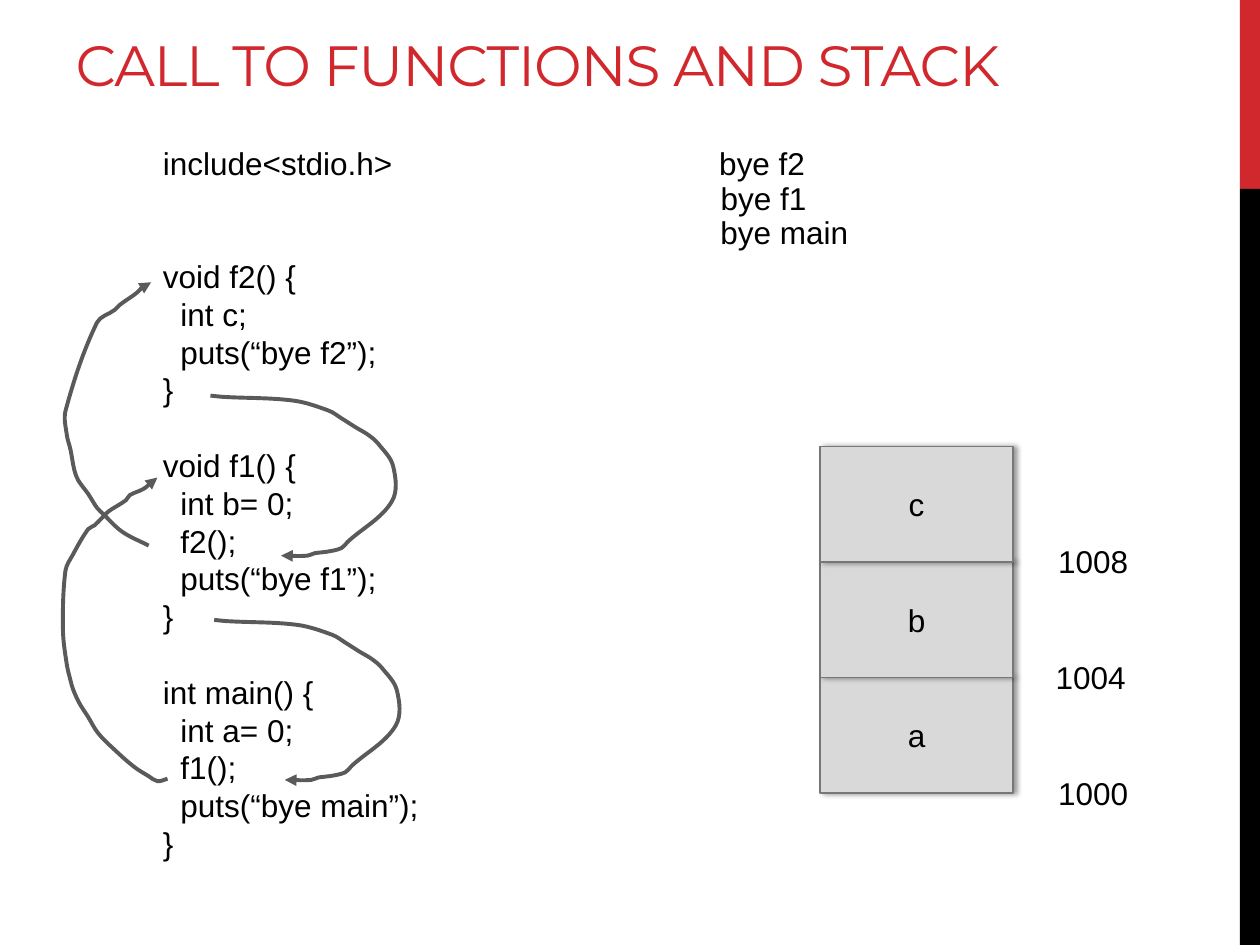
from math import dist

from lxml import etree
from pptx import Presentation
from pptx.dml.color import RGBColor
from pptx.enum.shapes import MSO_SHAPE
from pptx.enum.text import MSO_ANCHOR, MSO_AUTO_SIZE, PP_ALIGN
from pptx.oxml.ns import qn
from pptx.util import Inches, Pt

RECT = MSO_SHAPE.RECTANGLE
BOTTOM, MIDDLE = MSO_ANCHOR.BOTTOM, MSO_ANCHOR.MIDDLE
GROW = MSO_AUTO_SIZE.SHAPE_TO_FIT_TEXT
LEFT, CENTER = PP_ALIGN.LEFT, PP_ALIGN.CENTER
RED = RGBColor(0xD1, 0x28, 0x2E)
BLACK = RGBColor(0, 0, 0)
CELL = RGBColor(0xD9, 0xD9, 0xD9)
EDGE = RGBColor(0x77, 0x77, 0x77)
ARROW = RGBColor(0x5A, 0x5A, 0x5A)

# Grid of 100 columns by 75 rows
WIDE, HIGH = Inches(10), Inches(7.5)
UNIT = WIDE // 100
PITCH = 21.6  # points from one code line to the next

CODE = [  # blocks with the number of lines left free above each
    (0, ["include<stdio.h>"]),
    (2, ["void f2() {", "  int c;", "  puts(“bye f2”);", "}"]),
    (1, ["void f1() {", "  int b= 0;", "  f2();", "  puts(“bye f1”);", "}"]),
    (1, ["int main() {", "  int a= 0;", "  f1();", "  puts(“bye main”);", "}"]),
]
# Arrow routes, in grid units from the corner of their box
CALL_F1 = [(8.3, 23.9), (7.5, 24.1), (6.8, 23.7), (5.7, 23), (4.2, 21.7),
           (2.8, 20.3), (2, 19), (1.3, 17.9), (0.8, 16.8), (0.6, 16.1),
           (0.3, 14.8), (0, 12.1), (0.2, 7.4), (0.8, 6.1), (2, 4.1),
           (2.5, 3.8), (3.1, 3.2), (3.6, 2.7), (5, 1.8), (5.3, 1.4),
           (6.4, 0.9), (7.1, 0.3), (7.5, 0)]
CALL_F2 = [(6.7, 20.9), (4.6, 19.8), (3.1, 18.4), (2.6, 17.9),
           (1.9, 16.8), (1.1, 15.7), (0.8, 14.9), (0.5, 13.3), (0.2, 12.1),
           (0.1, 10.2), (2.6, 3.2), (4, 2.2), (4.4, 1.8), (5.4, 1.1),
           (5.8, 0.8), (6.3, 0.3), (6.9, 0)]
BACK = [(0, 0), (1, 0.1), (6.6, 0.4), (9.4, 1.2), (10.4, 1.8), (11.5, 2.5),
        (12.5, 3.1), (13.3, 3.8), (14.5, 5.6), (14.4, 8.4), (10.9, 11.6),
        (10.4, 12.1), (9.2, 12.4), (8.3, 12.5), (7.7, 12.7), (5.6, 12.7)]


def grid(*vals):
    return [round(v * UNIT) for v in vals]


def write(para, text, size=18, font="Arial", color=BLACK):
    run = para.add_run()
    run.text = text
    run.font.size, run.font.name = Pt(size), font
    run.font.color.rgb = color
    return run


def block(slide, box, fill):
    shape = slide.shapes.add_shape(RECT, *grid(*box))
    shape.shadow.inherit = False
    shape.fill.solid()
    shape.fill.fore_color.rgb = fill
    shape.line.fill.background()
    return shape


def note(slide, box):
    frame = slide.shapes.add_textbox(*grid(*box)).text_frame
    frame.word_wrap = False
    frame.auto_size = GROW
    return frame


def side(slide, box):
    x, y, w, h = box
    top = h / 5
    block(slide, (x, y, w, top), RED)
    block(slide, (x, y + top, w, h - top), BLACK)


def head(slide, box, text):
    title = slide.shapes.title
    title.left, title.top, title.width, title.height = grid(*box)
    frame = title.text_frame
    frame.vertical_anchor = BOTTOM
    para = frame.paragraphs[0]
    para.alignment = LEFT
    run = write(para, text, 32.4, "Montserrat", RED)
    run.font._element.set("spc", "-60")


def code(slide, box):
    frame = note(slide, box)
    para = frame.paragraphs[0]
    for gap, lines in CODE:
        for i, line in enumerate(lines):
            if gap or i:
                para = frame.add_paragraph()
            if gap and i == 0:
                para.space_before = Pt(gap * PITCH)
            para.line_spacing = Pt(PITCH)
            write(para, line)


def cast(shape):
    # Soft shadow to the right
    fx = shape._element.spPr.find(qn("a:effectLst"))
    drop = etree.SubElement(fx, qn("a:outerShdw"), blurRad=str(Pt(3.1)),
                            dist=str(Pt(1.8)), dir="0", rotWithShape="0")
    tint = etree.SubElement(drop, qn("a:srgbClr"), val="000000")
    etree.SubElement(tint, qn("a:alpha"), val="40000")


def stack(slide, box, names):
    x, y, w, h = box
    row = h / len(names)
    for i, name in reversed(list(enumerate(names))):
        cell = block(slide, (x, y + i * row, w, row), CELL)
        cell.line.color.rgb = EDGE
        cell.line.width = Pt(1)
        cast(cell)
        cell.text_frame.vertical_anchor = MIDDLE
        para = cell.text_frame.paragraphs[0]
        para.alignment = CENTER
        write(para, name)


def column(slide, box, step, items):
    # Labels at an equal step, each with its own indent and width
    x, y, h = box
    for i, (text, dent, w) in enumerate(items):
        frame = note(slide, (x + dent, y + i * step, w, h))
        write(frame.paragraphs[0], text)


def bend(curve):
    # Turn the straight pieces into cubic curves, smooth at each joint
    geom = curve._element.spPr.find(qn("a:custGeom"))
    pts = [(int(p.get("x")), int(p.get("y"))) for p in geom.iter(qn("a:pt"))]
    ends = [pts[0], *pts, pts[-1]]
    pieces = list(geom.iter(qn("a:lnTo")))
    for old, a, b, c, d in zip(pieces, ends, ends[1:], ends[2:], ends[3:]):
        size = dist(b, c) / 3
        out, back = size / dist(a, c), size / dist(b, d)
        knots = [[q + (r - p) * out for p, q, r in zip(a, b, c)],
                 [r - (s - q) * back for q, r, s in zip(b, c, d)], c]
        new = etree.Element(qn("a:cubicBezTo"))
        for x, y in knots:
            etree.SubElement(new, qn("a:pt"), x=str(round(x)), y=str(round(y)))
        old.getparent().replace(old, new)


def arrow(slide, spot, route):
    pts = [grid(*p) for p in route]
    pen = slide.shapes.build_freeform(*pts[0])
    pen.add_line_segments(pts[1:], close=False)
    curve = pen.convert_to_shape(*grid(*spot))
    bend(curve)
    curve.shadow.inherit = False
    curve.fill.background()
    curve.line.color.rgb = ARROW
    curve.line.width = Pt(2.25)
    etree.SubElement(curve.line._get_or_add_ln(), qn("a:tailEnd"),
                     type="triangle")


def main():
    deck = Presentation()
    deck.slide_width, deck.slide_height = WIDE, HIGH
    slide = deck.slides.add_slide(deck.slide_layouts[5])
    side(slide, (98.4, 0, 1.6, 75))
    head(slide, (5, 1.7, 90.2, 6.6), "CALL TO FUNCTIONS AND STACK")
    code(slide, (11.95, 10.9, 22.5, 58.6))
    # Stack cells and the address at the foot of each
    stack(slide, (65.1, 35.45, 15.3, 27.5), ["c", "b", "a"])
    column(slide, (82.8, 42.5, 4), 9.2,
           [("1008", 0.2, 7.6), ("1004", 0, 7.6), ("1000", 0.2, 7.6)])
    # Printed output
    column(slide, (56.1, 10.93, 4), 2.75,
           [("bye f2", 0, 8.9), ("bye f1", 0.1, 8.9), ("bye main", 0.1, 12.3)])
    # Calls and returns
    arrow(slide, (5, 37.9), CALL_F1)
    arrow(slide, (5.1, 22.4), CALL_F2)
    for spot in ((16.7, 31.4), (17, 49.2)):
        arrow(slide, spot, BACK)
    deck.save("out.pptx")


if __name__ == "__main__":
    main()
